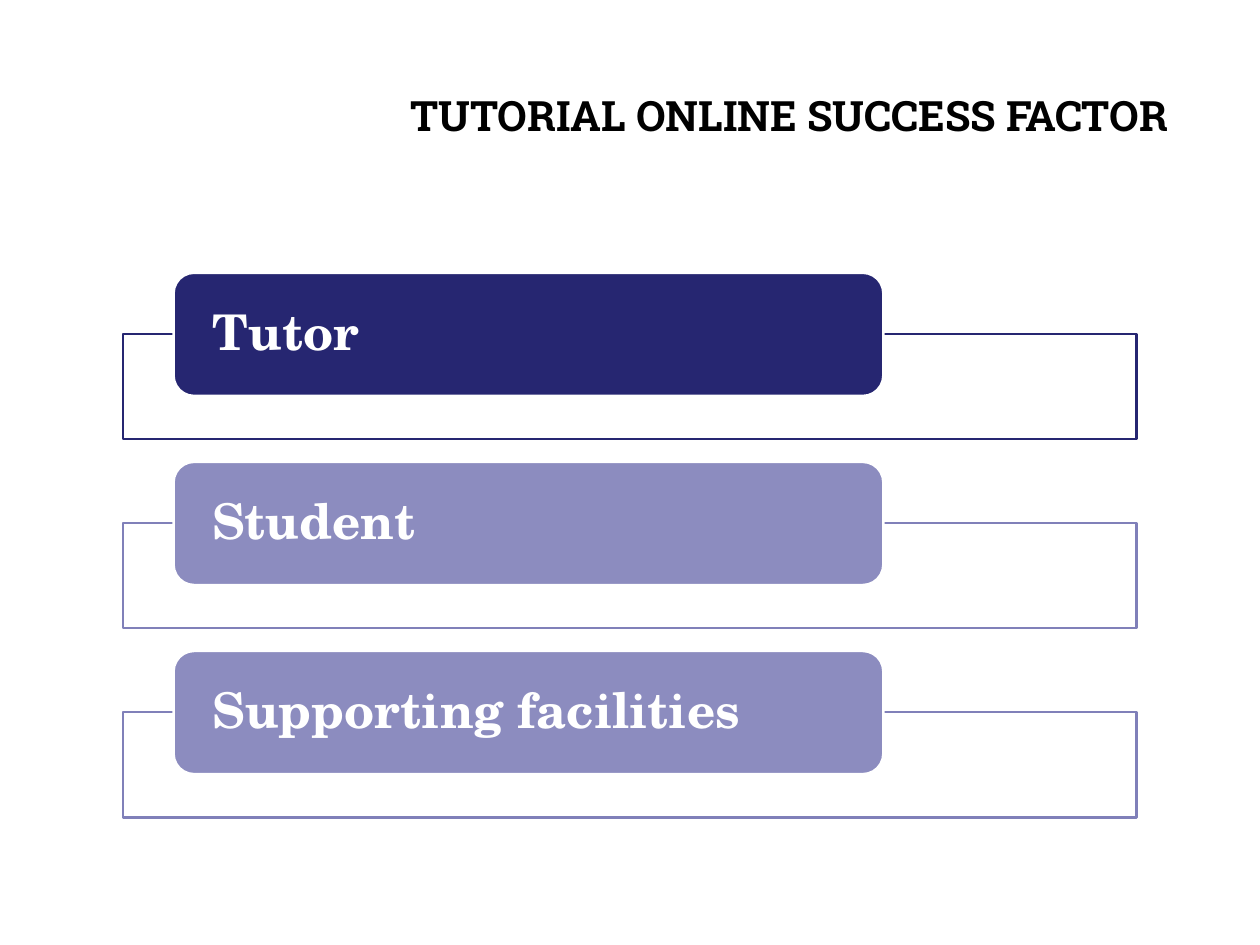
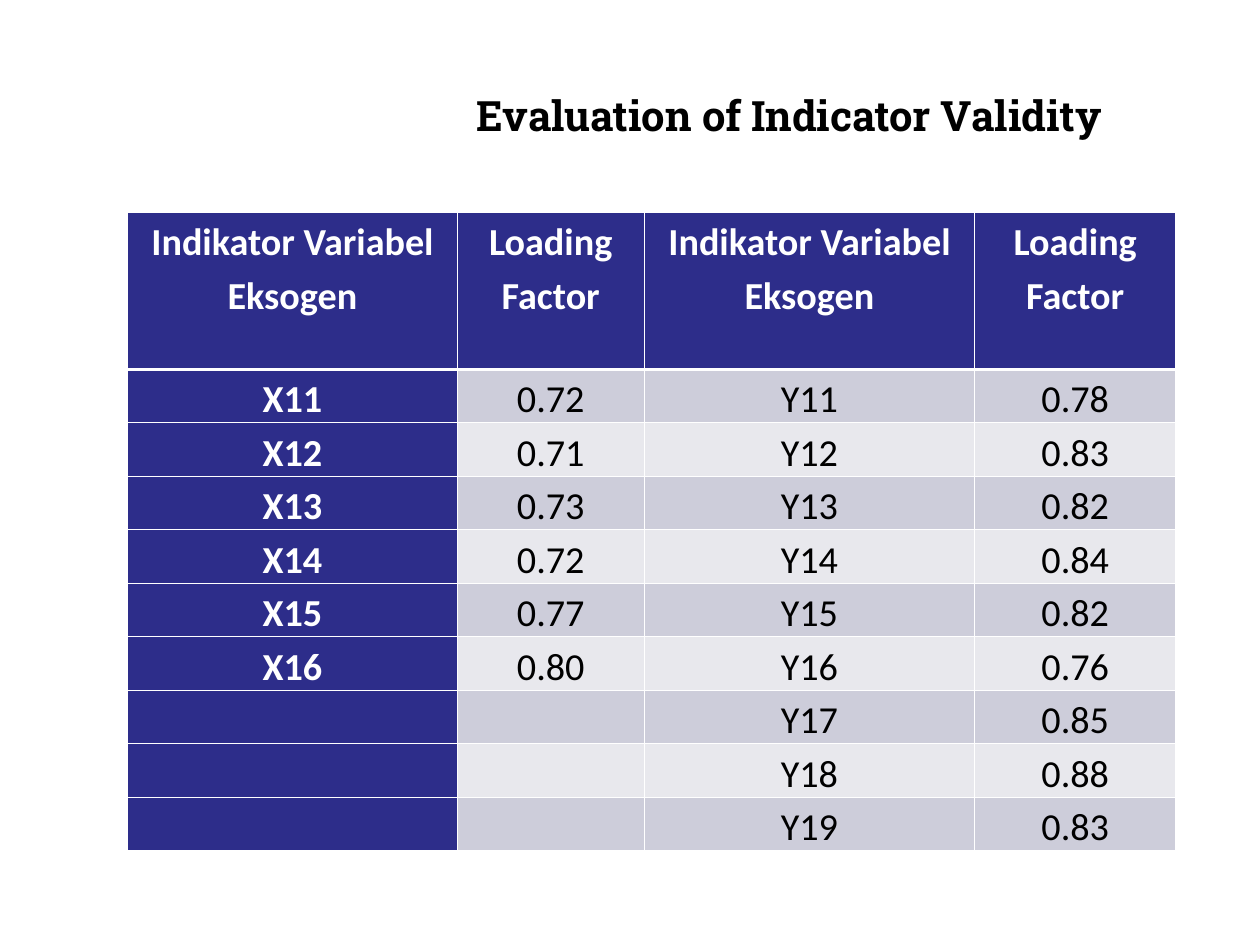
from itertools import zip_longest

from lxml import etree
from pptx import Presentation
from pptx import util as u
from pptx.dml.color import RGBColor
from pptx.enum import shapes, text
from pptx.oxml import ns

WIDTH, HEIGHT = u.Inches(14.22), u.Inches(10.67)
WHITE, BLACK = "FFFFFF", "000000"
NAVY, LILAC, LILAC_EDGE = "262671", "8C8CBF", "8080B9"
HEADER, BANDS = "2D2D8A", ("CDCDDA", "E8E8ED")

FACTORS = (("Tutor", NAVY, NAVY),
           ("Student", LILAC, LILAC_EDGE),
           ("Supporting facilities", LILAC, LILAC_EDGE))
HEADINGS = ("Indikator Variabel Eksogen", "Loading Factor") * 2
X_LOADINGS = ("0.72", "0.71", "0.73", "0.72", "0.77", "0.80")
Y_LOADINGS = ("0.78", "0.83", "0.82", "0.84", "0.82", "0.76", "0.85", "0.88", "0.83")


def rgb(value):
    return RGBColor.from_string(value)


def across(percent):
    return round(WIDTH * percent / 100)


def down(percent):
    return round(HEIGHT * percent / 100)


def box(left, top, width, height):
    return across(left), down(top), across(width), down(height)


class Deck:
    title_box = box(22.43, 8.62, 80.45, 7.03)
    title_font = ("Roboto Slab", 34, BLACK, True)
    label_font = ("TeX Gyre Schola", 40, WHITE, True)

    def __init__(self):
        self.prs = Presentation()
        self.prs.slide_width, self.prs.slide_height = WIDTH, HEIGHT
        self.slide = None

    def new_slide(self, heading):
        self.slide = self.prs.slides.add_slide(self.prs.slide_layouts[5])
        title = self.slide.shapes.title
        title.left, title.top, title.width, title.height = self.title_box
        self.set_text(title.text_frame, heading, self.title_font, 0.06, 0.06)

    def set_text(self, frame, wording, font, side, edge,
                 align=text.PP_ALIGN.CENTER, spacing=None):
        frame.word_wrap = True
        frame.auto_size = text.MSO_AUTO_SIZE.NONE
        frame.vertical_anchor = text.MSO_ANCHOR.MIDDLE
        frame.margin_left = frame.margin_right = u.Inches(side)
        frame.margin_top = frame.margin_bottom = u.Inches(edge)
        self.add_run(frame.paragraphs[0], wording, font, align, spacing)

    def add_run(self, paragraph, wording, font, align, spacing=None):
        paragraph.alignment = align
        paragraph.line_spacing = spacing
        run = paragraph.add_run()
        run.text = wording
        run.font.name, size, color, run.font.bold = font
        run.font.size = u.Pt(size)
        run.font.color.rgb = rgb(color)

    def block(self, preset, place, fill, line):
        shape = self.slide.shapes.add_shape(preset, *place)
        shape.shadow.inherit = False
        shape.fill.solid()
        shape.fill.fore_color.rgb = rgb(fill)
        shape.line.color.rgb = rgb(line)
        shape.line.width = u.Pt(2)
        return shape

    def factor(self, index, name, fill, edge):
        offset = 20.01 * index
        frame = self.block(shapes.MSO_SHAPE.RECTANGLE,
                           box(9.77, 35.33 + offset, 80.45, 11.15), WHITE, edge)
        tint = frame.element.spPr.find(ns.qn("a:solidFill"))[0]
        etree.SubElement(tint, ns.qn("a:alpha"), val="90000")
        label = self.block(shapes.MSO_SHAPE.ROUNDED_RECTANGLE,
                           box(13.78, 28.87 + offset, 56.33, 13.03), fill, WHITE)
        self.set_text(label.text_frame, name, self.label_font, 0.37, 0.07,
                      text.PP_ALIGN.LEFT, 0.9)

    def border(self, cell, **widths):
        props = cell._tc.get_or_add_tcPr()
        for side in "LRTB":
            line = etree.SubElement(props, ns.qn("a:ln" + side), w=str(u.Pt(widths.get(side, 1))))
            fill = etree.SubElement(line, ns.qn("a:solidFill"))
            etree.SubElement(fill, ns.qn("a:srgbClr"), val=WHITE)

    def cell(self, cell, wording, row, column):
        strong = row == 0 or column == 0
        cell.margin_left = cell.margin_right = u.Inches(0.19)
        cell.margin_top = cell.margin_bottom = 0
        self.border(cell, B=3 if row == 0 else 1, T=3 if row == 1 else 1)
        cell.fill.solid()
        cell.fill.fore_color.rgb = rgb(HEADER if strong else BANDS[(row - 1) % 2])
        if wording:
            font = ("Calibri", 31, WHITE if strong else BLACK, strong)
            self.add_run(cell.text_frame.paragraphs[0], wording, font,
                         text.PP_ALIGN.CENTER, 1.15)

    def table(self, left, top, widths, heights, rows):
        place = box(left, top, sum(widths), sum(heights))
        table = self.slide.shapes.add_table(len(rows), len(widths), *place).table
        for column, width in zip(table.columns, widths):
            column.width = across(width)
        for line, height in zip(table.rows, heights):
            line.height = down(height)
        for row, wordings in enumerate(rows):
            for column, wording in enumerate(wordings):
                self.cell(table.cell(row, column), wording, row, column)


def indicators(letter, loadings):
    return [(f"{letter}1{number}", loading) for number, loading in enumerate(loadings, 1)]


def main():
    deck = Deck()

    deck.new_slide("TUTORIAL ONLINE SUCCESS FACTOR")
    for index, factor in enumerate(FACTORS):
        deck.factor(index, *factor)

    deck.new_slide("Evaluation of Indicator Validity")
    pairs = zip_longest(indicators("X", X_LOADINGS), indicators("Y", Y_LOADINGS),
                        fillvalue=("", ""))
    rows = [HEADINGS] + [x + y for x, y in pairs]
    deck.table(10.13, 22.49, (26.16, 14.84, 26.23, 15.96),
               [16.59] + [5.53] * len(Y_LOADINGS), rows)

    deck.prs.save("out.pptx")


if __name__ == "__main__":
    main()
